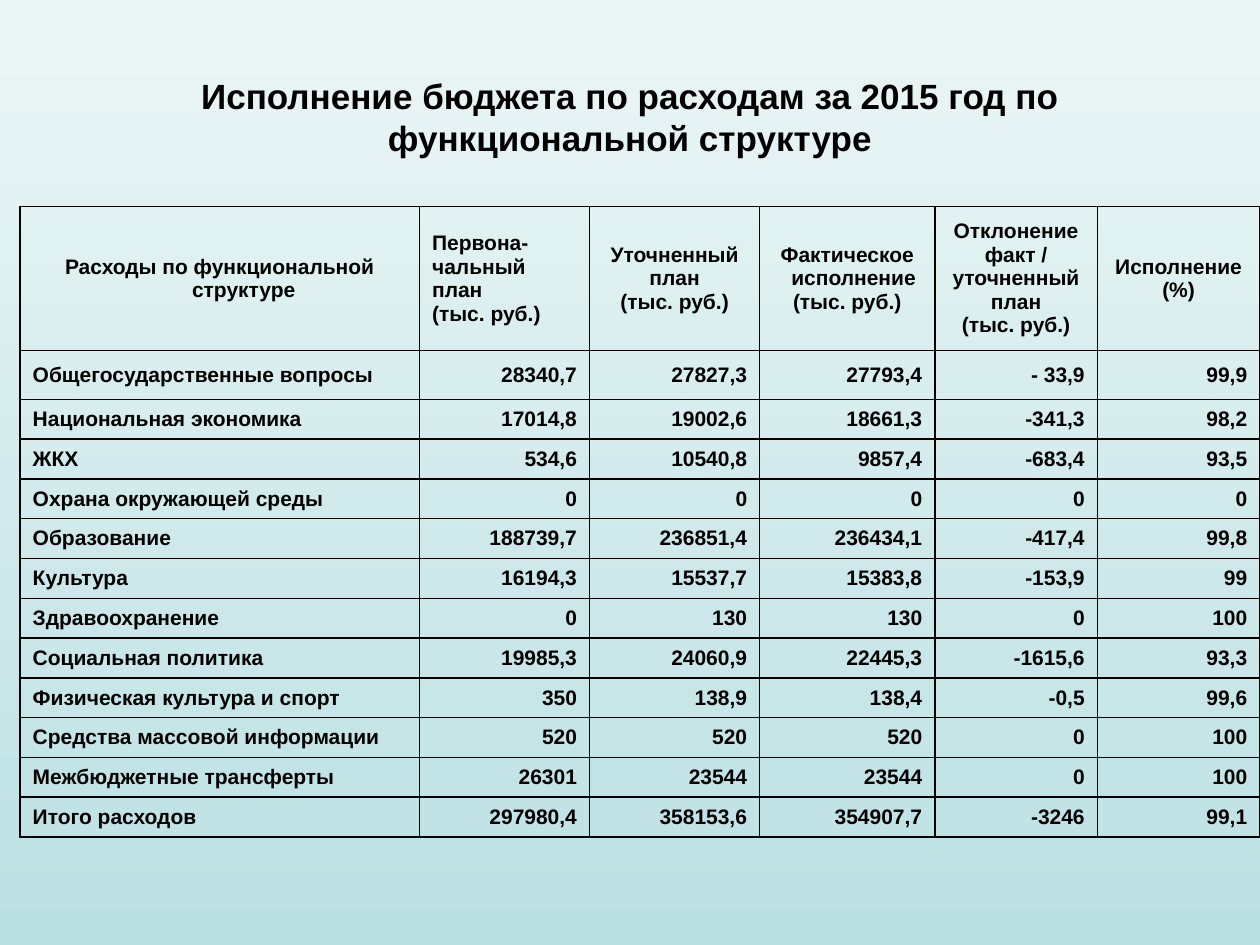
from lxml import etree
from pptx import Presentation, util as u
from pptx.dml.color import RGBColor
from pptx.enum import text
from pptx.oxml import ns

Inches = u.Inches
Align = text.PP_ALIGN


def color(value):
    return RGBColor.from_string(value)


def style(paragraph, size, alignment, indent=0):
    paragraph.alignment = alignment
    paragraph.font.name = "Arial"
    paragraph.font.size = u.Pt(size)
    paragraph.font.bold = True
    paragraph.font.color.rgb = color("000000")
    if indent:
        properties = paragraph._p.get_or_add_pPr()
        properties.set("marL", str(Inches(indent)))
        properties.set("indent", str(-Inches(indent)))


presentation = Presentation()
presentation.slide_width = Inches(10)
presentation.slide_height = Inches(7.5)
slide = presentation.slides.add_slide(presentation.slide_layouts[6])

# Background gradient, top to bottom
background = slide.background.fill
background.gradient()
background.gradient_angle = 270
for stop, value in zip(background.gradient_stops, ("ECF6F6", "BBE0E3")):
    stop.color.rgb = color(value)

# Title
title = slide.shapes.add_textbox(Inches(0.5), Inches(0.3), Inches(9), Inches(1.25))
title.text_frame.word_wrap = True
title.text_frame.vertical_anchor = text.MSO_ANCHOR.MIDDLE
title.text_frame.text = "Исполнение бюджета по расходам за 2015 год по функциональной структуре"
style(title.text_frame.paragraphs[0], 20, Align.CENTER)

# Table content
headers = [
    "Расходы по функциональной структуре",
    "Первона-чальный план\n(тыс. руб.)",
    "Уточненный план\n(тыс. руб.)",
    "Фактическое исполнение\n(тыс. руб.)",
    "Отклонение факт / уточненный план\n(тыс. руб.)",
    "Исполнение (%)",
]
expenses = [
    ("Общегосударственные вопросы", "28340,7", "27827,3", "27793,4", "- 33,9", "99,9"),
    ("Национальная экономика", "17014,8", "19002,6", "18661,3", "-341,3", "98,2"),
    ("ЖКХ", "534,6", "10540,8", "9857,4", "-683,4", "93,5"),
    ("Охрана окружающей среды", "0", "0", "0", "0", "0"),
    ("Образование", "188739,7", "236851,4", "236434,1", "-417,4", "99,8"),
    ("Культура", "16194,3", "15537,7", "15383,8", "-153,9", "99"),
    ("Здравоохранение", "0", "130", "130", "0", "100"),
    ("Социальная политика", "19985,3", "24060,9", "22445,3", "-1615,6", "93,3"),
    ("Физическая культура и спорт", "350", "138,9", "138,4", "-0,5", "99,6"),
    ("Средства массовой информации", "520", "520", "520", "0", "100"),
    ("Межбюджетные трансферты", "26301", "23544", "23544", "0", "100"),
    ("Итого расходов", "297980,4", "358153,6", "354907,7", "-3246", "99,1"),
]
rows = [headers, *expenses]
column_widths = [3.17, 1.35, 1.35, 1.39, 1.29, 1.29]
row_heights = [1.14, 0.39] + [0.316] * (len(rows) - 2)
header_alignments = [Align.CENTER, Align.LEFT] + [Align.CENTER] * 4
header_indents = [0.38, 0, 0, 0.1, 0, 0]

# Table grid
table = slide.shapes.add_table(
    len(rows), len(headers), Inches(0.16), Inches(1.64), Inches(9.84), Inches(5.01)
).table
table.first_row = False
table.horz_banding = False
for column, width in zip(table.columns, column_widths):
    column.width = Inches(width)
for row, height in zip(table.rows, row_heights):
    row.height = Inches(height)

# Cells: text, borders, no fill
for row_index, values in enumerate(rows):
    for column_index, value in enumerate(values):
        cell = table.cell(row_index, column_index)
        cell.text = value
        cell.vertical_anchor = text.MSO_ANCHOR.MIDDLE
        if row_index == 0:
            alignment = header_alignments[column_index]
            indent = header_indents[column_index]
        elif column_index == 0:
            is_total = row_index == len(rows) - 1
            alignment = Align.LEFT if is_total else Align.JUSTIFY
            indent = 0.38
        else:
            alignment, indent = Align.RIGHT, 0
        for paragraph in cell.text_frame.paragraphs:
            style(paragraph, 12, alignment, indent)

        cell_properties = cell._tc.get_or_add_tcPr()
        for side in ("a:lnL", "a:lnR", "a:lnT", "a:lnB"):
            border = etree.SubElement(cell_properties, ns.qn(side), w=str(u.Pt(1)))
            border_fill = etree.SubElement(border, ns.qn("a:solidFill"))
            etree.SubElement(border_fill, ns.qn("a:srgbClr"), val="000000")
        cell.fill.background()

presentation.save("out.pptx")
